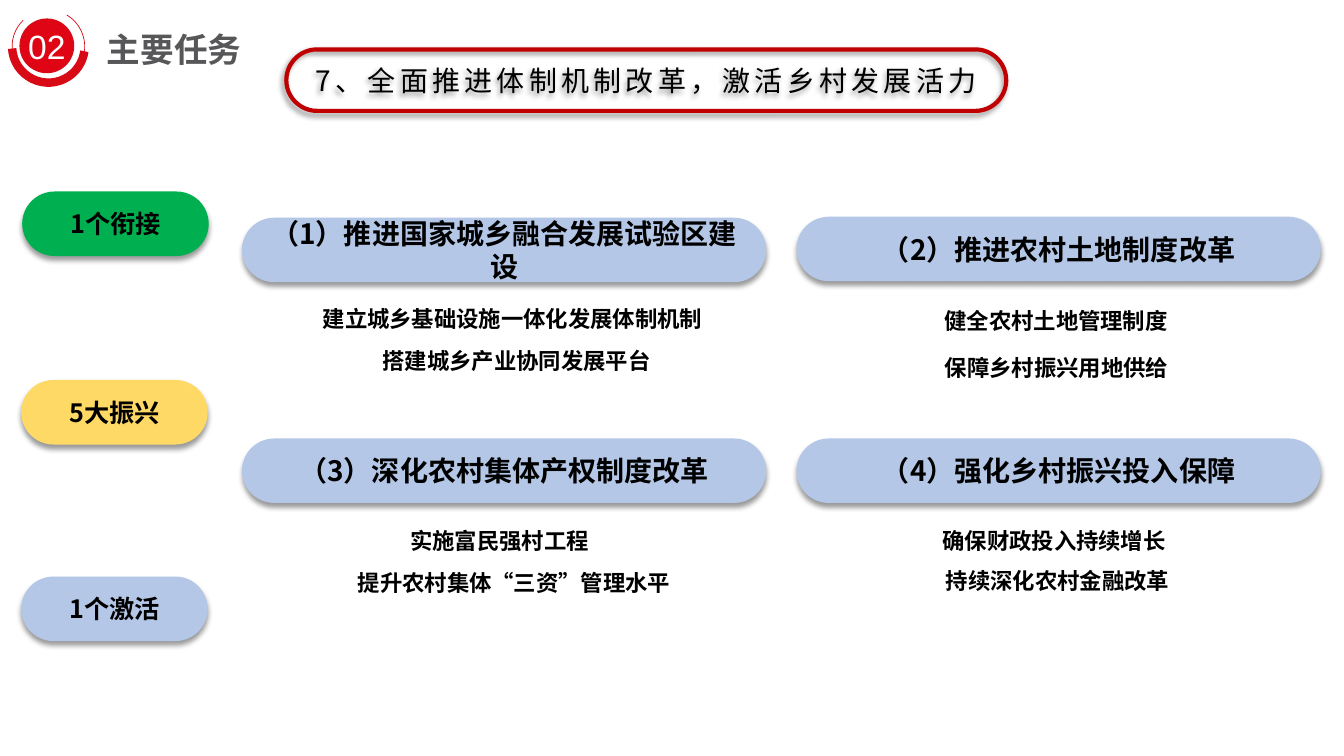
from dataclasses import dataclass

from lxml import etree
from pptx import Presentation
from pptx.dml.color import RGBColor
from pptx.enum.shapes import MSO_SHAPE
from pptx.enum.text import MSO_ANCHOR, MSO_AUTO_SIZE, PP_ALIGN
from pptx.oxml.ns import qn
from pptx.util import Inches, Pt

ROUND, OVAL, ARC = MSO_SHAPE.ROUNDED_RECTANGLE, MSO_SHAPE.OVAL, MSO_SHAPE.ARC
LEFT, CENTER = PP_ALIGN.LEFT, PP_ALIGN.CENTER
MIDDLE, TOP = MSO_ANCHOR.MIDDLE, MSO_ANCHOR.TOP
GROW = MSO_AUTO_SIZE.SHAPE_TO_FIT_TEXT


@dataclass(frozen=True)
class Theme:
    cjk: str = "Noto Sans CJK SC"
    latin: str = "Arial"
    black: str = "000000"
    white: str = "FFFFFF"
    badge: str = "DF0515"
    ring: str = "D80A16"
    banner: str = "C00000"
    green: str = "00B050"
    yellow: str = "FFD966"
    blue: str = "B4C7E7"
    title_from: str = "575658"
    title_to: str = "252223"
    title_size: int = 24
    heading_size: int = 20
    stage_size: int = 18
    detail_size: int = 16


T = Theme()
PILL_H = 0.64
STAGE_W = 1.85
CARD_W = 5.2
DETAIL_H = 0.37

STAGES = [  # text, colour, left, top
    ("1个衔接", T.green, 0.22, 1.9),
    ("5大振兴", T.yellow, 0.21, 3.77),
    ("1个激活", T.blue, 0.21, 5.72),
]
# heading, left, top, details; a detail is text, left and top within the card, width
CARDS = [
    ("（1）推进国家城乡融合发展试验区建设", 2.4, 2.16, [
        ("建立城乡基础设施一体化发展体制机制", 0.45, 0.82, 4.47),
        ("搭建城乡产业协同发展平台", 1.26, 1.23, 2.93)]),
    ("（2）推进农村土地制度改革", 7.9, 2.15, [
        ("健全农村土地管理制度", 1.33, 0.85, 2.49),
        ("保障乡村振兴用地供给", 1.07, 1.31, 3.02)]),
    ("（3）深化农村集体产权制度改革", 2.4, 4.35, [
        ("实施富民强村工程", 1.31, 0.83, 2.49),
        ("提升农村集体“三资”管理水平", 0.85, 1.25, 3.7)]),
    ("（4）强化乡村振兴投入保障", 7.9, 4.35, [
        ("确保财政投入持续增长", 1.31, 0.83, 2.49),
        ("持续深化农村金融改革", 0.74, 1.23, 3.7)]),
]


def rgb(value):
    return RGBColor.from_string(value)


def write(sp, text, size, color=T.black, font=T.cjk, bold=True, align=CENTER,
          anchor=MIDDLE, insets=(0.1, 0.05), wrap=True, spacing=None):
    tf = sp.text_frame
    tf.word_wrap = wrap
    tf.vertical_anchor = anchor
    tf.margin_left = tf.margin_right = Inches(insets[0])
    tf.margin_top = tf.margin_bottom = Inches(insets[1])
    p = tf.paragraphs[0]
    p.alignment = align
    r = p.add_run()
    r.text = text
    r.font.size, r.font.bold, r.font.name = Pt(size), bold, font
    r.font.color.rgb = rgb(color)
    rpr = r.font._element
    etree.SubElement(rpr, qn("a:ea"), typeface=font)
    if spacing:
        rpr.set("spc", str(spacing * 100))
    return r


def add_shape(slide, kind, box, fill=None, line=None, width=1):
    sp = slide.shapes.add_shape(kind, *map(Inches, box))
    sp.shadow.inherit = False
    if fill:
        sp.fill.solid()
        sp.fill.fore_color.rgb = rgb(fill)
    else:
        sp.fill.background()
    if line:
        sp.line.color.rgb = rgb(line)
        sp.line.width = Pt(width)
    else:
        sp.line.fill.background()
    return sp


def add_pill(slide, box, angle=90, **style):
    """Fully rounded bar with a soft shadow cast at the given angle."""
    sp = add_shape(slide, ROUND, box, **style)
    sp.adjustments[0] = 0.5
    effects = sp._element.spPr.find(qn("a:effectLst"))
    shadow = etree.SubElement(effects, qn("a:outerShdw"), blurRad=str(Pt(4)),
                              dist=str(Pt(3)), dir=str(angle * 60000),
                              algn="t", rotWithShape="0")
    color = etree.SubElement(shadow, qn("a:srgbClr"), val=T.black)
    etree.SubElement(color, qn("a:alpha"), val="40000")
    return sp


def add_text(slide, box, text, size, **style):
    sp = slide.shapes.add_textbox(*map(Inches, box))
    r = write(sp, text, size, anchor=TOP, **style)
    sp.text_frame.auto_size = GROW
    return r


def section_title(slide, x, y):
    """Numbered badge with its two rings, and the section name beside it."""
    r = add_text(slide, (x + 0.87, y + 0.16, 4.44, 0.47), "主要任务",
                 T.title_size, align=LEFT, insets=(0.07, 0.03))
    r.font.fill.gradient()
    r.font.fill.gradient_angle = 240
    for stop, color in zip(r.font.fill.gradient_stops, (T.title_from, T.title_to)):
        stop.color.rgb = rgb(color)
    badge = add_shape(slide, OVAL, (x + 0.08, y + 0.09, 0.53, 0.53), T.badge, T.ring)
    write(badge, "02", T.title_size, T.white, T.latin, bold=False, wrap=False)
    for start, end, width in ((34.06, 205.29, 0.5), (74.49, 175.71, 6)):
        ring = add_shape(slide, ARC, (x, y, 0.72, 0.72), line=T.ring, width=width)
        ring.rotation = 243.7
        ring.adjustments[0], ring.adjustments[1] = start, end


def banner(slide, box):
    sp = add_pill(slide, box, angle=135, line=T.banner, width=3)
    write(sp, "7、全面推进体制机制改革，激活乡村发展活力", T.heading_size,
          bold=False, insets=(0.13, 0.07), spacing=3)


def stage(slide, text, color, x, y):
    write(add_pill(slide, (x, y, STAGE_W, PILL_H), fill=color), text, T.stage_size)


def card(slide, heading, x, y, details):
    sp = add_pill(slide, (x, y, CARD_W, PILL_H), fill=T.blue)
    write(sp, heading, T.heading_size)
    for text, dx, dy, w in details:
        add_text(slide, (x + dx, y + dy, w, DETAIL_H), text, T.detail_size)


def main():
    prs = Presentation()
    prs.slide_width, prs.slide_height = Inches(13.33), Inches(7.5)
    slide = prs.slides.add_slide(prs.slide_layouts[6])
    section_title(slide, 0.12, 0.1)
    banner(slide, (2.84, 0.49, 7.14, 0.61))
    for item in STAGES:
        stage(slide, *item)
    for item in CARDS:
        card(slide, *item)
    prs.save("out.pptx")


if __name__ == "__main__":
    main()
